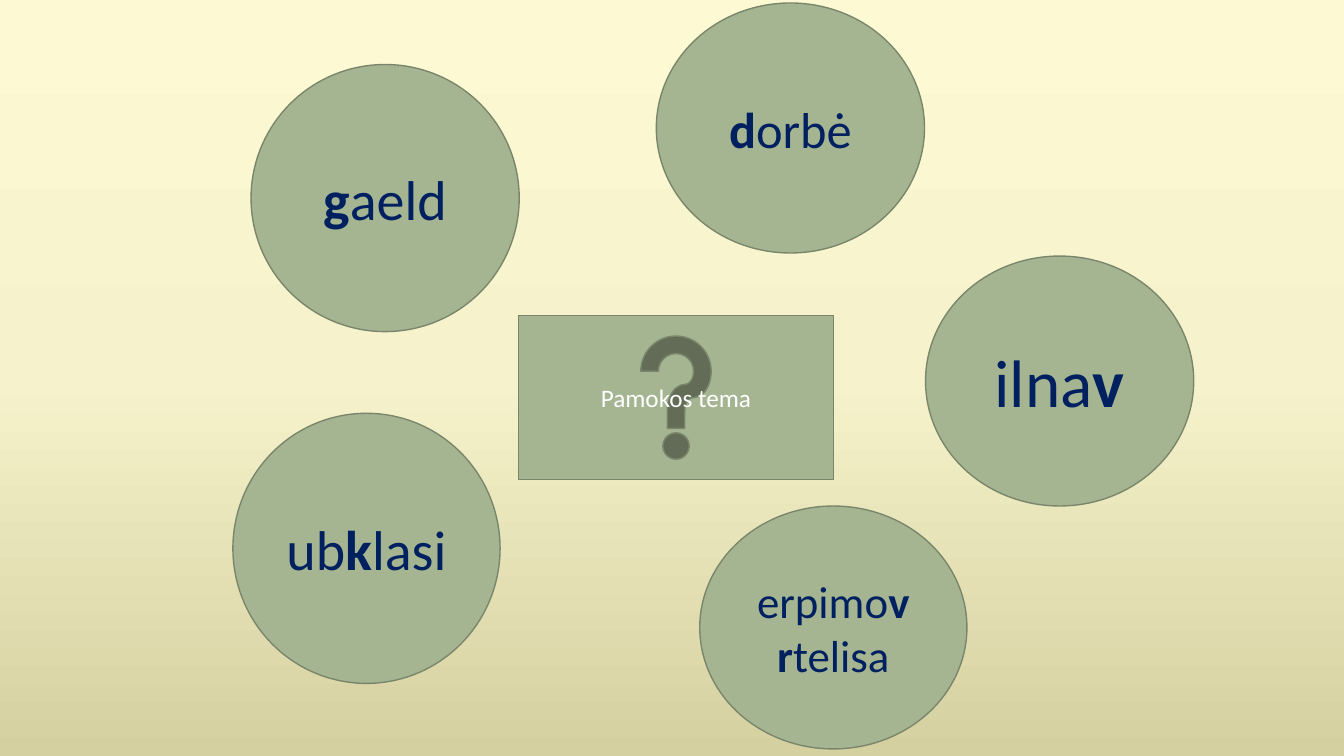
"""Build a slide of scrambled words set around the lesson topic."""
from copy import deepcopy
from dataclasses import dataclass

from pptx import Presentation
from pptx.dml.color import RGBColor
from pptx.enum.shapes import MSO_SHAPE
from pptx.enum.text import MSO_ANCHOR, PP_ALIGN
from pptx.oxml.ns import qn
from pptx.slide import Slide
from pptx.util import Inches, Pt

FONT = "Calibri"
SAGE, MOSS, NAVY, WHITE = "A5B592", "7A866C", "002060", "FFFFFF"
BACKGROUND_STOPS = [(0, "FDFAD3"), (0.5, "F6F2CB"), (1, "D4D0A0")]


@dataclass
class Span:
    text: str
    bold: bool = False


@dataclass
class Bubble:
    left: float
    top: float
    width: float
    height: float
    size: int
    spans: list[Span]
    preset: MSO_SHAPE = MSO_SHAPE.OVAL
    color: str = NAVY


BUBBLES = [
    Bubble(2.31, 4.1, 2.65, 2.68, 40, [Span("ub"), Span("k", True), Span("lasi")]),
    Bubble(6.51, 0.03, 2.66, 2.48, 36, [Span("d", True), Span("orbė")]),
    Bubble(9.18, 2.54, 2.66, 2.48, 48, [Span("ilna"), Span("v", True)]),
    Bubble(2.49, 0.64, 2.66, 2.65, 40, [Span("g", True), Span("aeld")]),
    Bubble(6.94, 5.02, 2.65, 2.41, 32,
           [Span("erpimo"), Span("v r", True), Span("telisa")]),
    Bubble(5.14, 3.13, 3.13, 1.63, 18, [Span("Pamokos tema")],
           MSO_SHAPE.ACTION_BUTTON_HELP, WHITE),
]


def rgb(value: str) -> RGBColor:
    return RGBColor.from_string(value)


def paint_background(page: Slide) -> None:
    fill = page.background.fill
    fill.gradient()
    fill.gradient_angle = 270
    first_stop = next(page.element.iter(qn("a:gs")))
    first_stop.addnext(deepcopy(first_stop))
    for stop, (position, color) in zip(fill.gradient_stops, BACKGROUND_STOPS):
        stop.position = position
        stop.color.rgb = rgb(color)


def draw_bubble(page: Slide, bubble: Bubble) -> None:
    box = page.shapes.add_shape(
        bubble.preset, Inches(bubble.left), Inches(bubble.top),
        Inches(bubble.width), Inches(bubble.height))
    box.shadow.inherit = False
    box.fill.solid()
    box.fill.fore_color.rgb = rgb(SAGE)
    box.line.color.rgb = rgb(MOSS)
    box.line.width = Pt(1)
    frame = box.text_frame
    frame.word_wrap = True
    frame.vertical_anchor = MSO_ANCHOR.MIDDLE
    para = frame.paragraphs[0]
    para.alignment = PP_ALIGN.CENTER
    for span in bubble.spans:
        run = para.add_run()
        run.text = span.text
        run.font.name = FONT
        run.font.size = Pt(bubble.size)
        run.font.bold = span.bold
        run.font.color.rgb = rgb(bubble.color)


def main() -> None:
    deck = Presentation()
    deck.slide_width, deck.slide_height = Inches(13.33), Inches(7.5)
    page = deck.slides.add_slide(deck.slide_layouts[6])
    paint_background(page)
    for bubble in BUBBLES:
        draw_bubble(page, bubble)
    deck.save("out.pptx")


if __name__ == "__main__":
    main()
